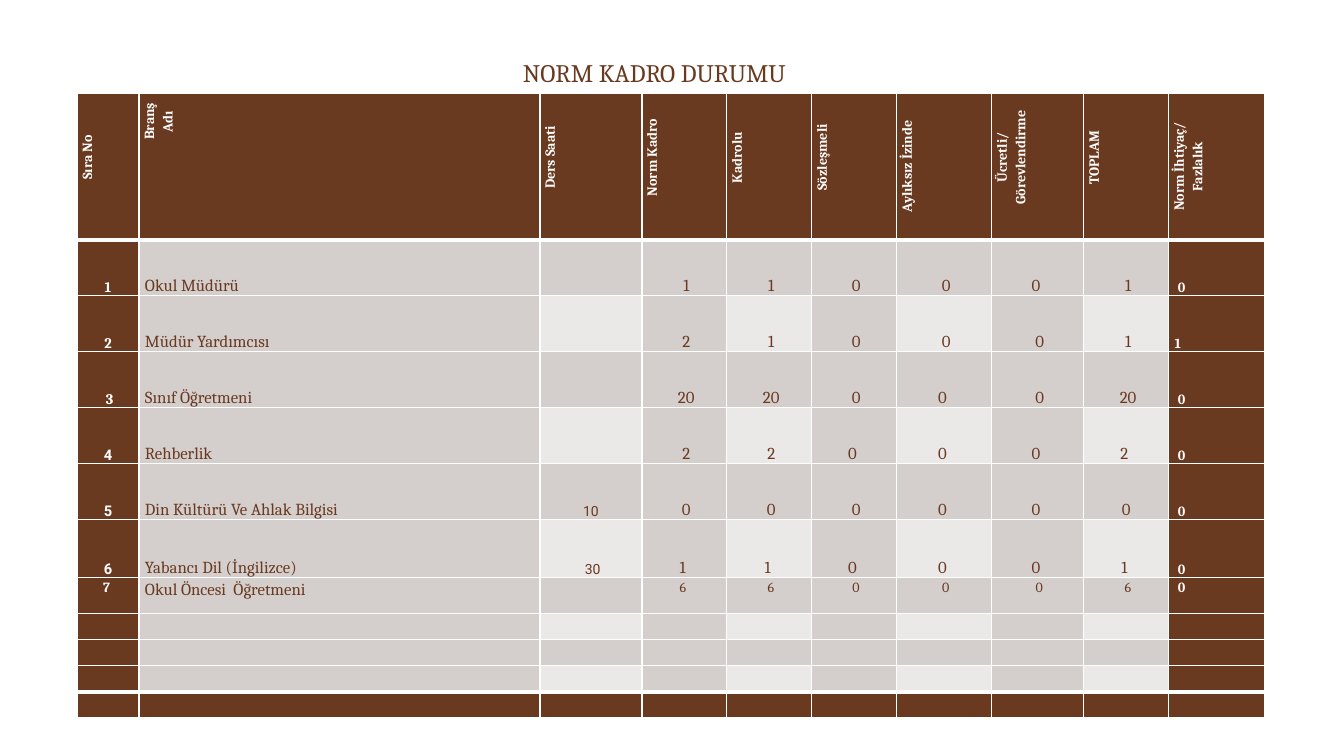
import lxml.etree
import pptx
import pptx.dml.color
import pptx.enum.text
import pptx.oxml.ns
import pptx.util

PX = 914400 / 100.8
BROWN, GREY, PALE, WHITE = "6A3A20", "D4CECD", "EBE8E8", "FFFFFF"
SERIF, SANS = "Cambria", "Roboto"
ALIGN = pptx.enum.text.PP_ALIGN
ANCHOR = pptx.enum.text.MSO_ANCHOR
COLUMNS = [62, 401, 102, 85, 85, 85, 95, 92, 85, 96]
ROWS = [115] + [56] * 5 + [58, 36] + [26] * 4
LINE = 18
HEADERS = [
    ("Sıra No", 1), ("Branş Adı", 5), ("Ders Saati", 1), ("Norm Kadro", 1),
    ("Kadrolu", 1), ("Sözleşmeli", 1), ("Aylıksız İzinde", 0),
    ("Ücretli/ Görevlendirme", 1), ("TOPLAM", 1), ("Norm İhtiyaç/ Fazlalık", 0),
]
BRANCHES = [
    ["1", "Okul Müdürü", "", "_1", "_1", "_0", "_0", "0_", "_1", "_0"],
    ["2", "Müdür Yardımcısı", "", "_2", "_1", "_0", "_0", "_0", "_1", "1"],
    ["_3", "Sınıf Öğretmeni", "", "_20", "_20", "_0", "0_", "_0", "_20", "_0"],
    ["4", "Rehberlik_", "", "_2", "_2", "0_", "0_", "0_", "2_", "_0"],
    ["5", "Din Kültürü Ve Ahlak Bilgisi_", "10", "_0", "_0", "_0", "0_", "0_", "0", "_0"],
    ["6", "Yabancı Dil (İngilizce)_", "_30", "1_", "1_", "0_", "0_", "0_", "1_", "_0"],
    ["7_", "Okul Öncesi _Öğretmeni", "", "6_", "_6", "_0", "_0", "_0", "_6", "_0"],
]


def px(length):
    """Turn pixels into EMU."""
    return pptx.util.Emu(round(length * PX))


def color(value):
    """Turn a hex string into a colour."""
    return pptx.dml.color.RGBColor.from_string(value)


def style_font(font, size, ink, bold=False, name=SERIF):
    """Set the face, size, weight and colour of a font."""
    font.name, font.size, font.bold = name, pptx.util.Pt(size), bold
    font.color.rgb = color(ink)


def set_borders(cell, **widths):
    """Draw white lines on the four sides, 1 pt unless given."""
    properties = cell._tc.get_or_add_tcPr()
    for index, side in enumerate(("lnL", "lnR", "lnT", "lnB")):
        line = lxml.etree.Element(pptx.oxml.ns.qn("a:" + side))
        line.set("w", str(pptx.util.Pt(widths.get(side, 1))))
        fill = lxml.etree.SubElement(line, pptx.oxml.ns.qn("a:solidFill"))
        lxml.etree.SubElement(fill, pptx.oxml.ns.qn("a:srgbClr")).set("val", WHITE)
        properties.insert(index, line)


def paint_cell(cell, fill, **widths):
    """Give a cell its fill, borders and margins."""
    cell.fill.solid()
    cell.fill.fore_color.rgb = color(fill)
    set_borders(cell, **widths)
    cell.margin_left = cell.margin_right = px(6)
    cell.margin_top = cell.margin_bottom = 0


def write_cell(cell, text, align, size, ink, bold=False, name=SERIF):
    """Write one paragraph in a cell, or size its empty paragraph."""
    cell.text_frame.text = text.replace("_", chr(160))
    para = cell.text_frame.paragraphs[0]
    para.alignment, para.line_spacing = align, 1.15
    for span in para.runs:
        style_font(span.font, size, ink, bold, name)
    if not text:
        end = lxml.etree.SubElement(para._p, pptx.oxml.ns.qn("a:endParaRPr"))
        end.set("sz", str(size * 100))


def write_header(cell, text, lines_before):
    """Write an upward column heading, moved in by whole lines."""
    paint_cell(cell, BROWN, lnB=3)
    write_cell(cell, text, ALIGN.CENTER, 10, WHITE, True)
    cell.vertical_anchor = ANCHOR.MIDDLE
    cell.margin_left = px(6 + LINE * lines_before)
    cell._tc.get_or_add_tcPr().set("vert", "vert270")


def write_body(cell, text, row, column):
    """Write a body cell in the style of its column."""
    last_column, last_row = len(COLUMNS) - 1, len(ROWS) - 1
    edge = column in (0, last_column)
    pale = row % 2 == 0 and column > 1 and column % 2 == 0
    fill = BROWN if edge or row == last_row else PALE if pale else GREY
    paint_cell(cell, fill, lnT=3 if row == last_row else 1, lnB=3 if row == last_row - 1 else 1)
    align = ALIGN.LEFT if column in (1, last_column) else ALIGN.CENTER
    short = row >= len(BRANCHES)
    if column == 0:
        size = 10 if short else 10.5
    elif column in (2, last_column) or (short and column > 1) or not text:
        size = 10
    else:
        size = 12
    sans = column == 2 or (column == 0 and row in (4, 5, 6))
    write_cell(cell, text, align, int(size) if not text else size,
               WHITE if edge else BROWN, edge, SANS if sans else SERIF)
    cell.vertical_anchor = ANCHOR.TOP if short else ANCHOR.BOTTOM


def add_staff_table(page):
    """Add the staffing table."""
    frame = page.shapes.add_table(len(ROWS), len(COLUMNS), px(77), px(93),
                                  px(sum(COLUMNS)), px(sum(ROWS)))
    table = frame.table
    table.horz_banding = False
    for column, width in zip(table.columns, COLUMNS):
        column.width = px(width)
    for row, height in zip(table.rows, ROWS):
        row.height = px(height)
    for column, (text, lines_before) in enumerate(HEADERS):
        write_header(table.cell(0, column), text, lines_before)
    blank_rows = [[""] * len(COLUMNS)] * (len(ROWS) - 1 - len(BRANCHES))
    for row, texts in enumerate(BRANCHES + blank_rows, 1):
        for column, text in enumerate(texts):
            write_body(table.cell(row, column), text, row, column)


def add_title(page, text):
    """Add the heading above the table."""
    box = page.shapes.add_textbox(px(513), px(52), px(715), px(40))
    box.text_frame.word_wrap = True
    box.text_frame.text = text
    style_font(box.text_frame.paragraphs[0].runs[0].font, 18, BROWN)


def main():
    """Build and save the slide."""
    deck = pptx.Presentation()
    deck.slide_width, deck.slide_height = px(1344), px(756)
    page = deck.slides.add_slide(deck.slide_layouts[6])
    add_staff_table(page)
    add_title(page, "NORM KADRO DURUMU")
    deck.save("out.pptx")


if __name__ == "__main__":
    main()
